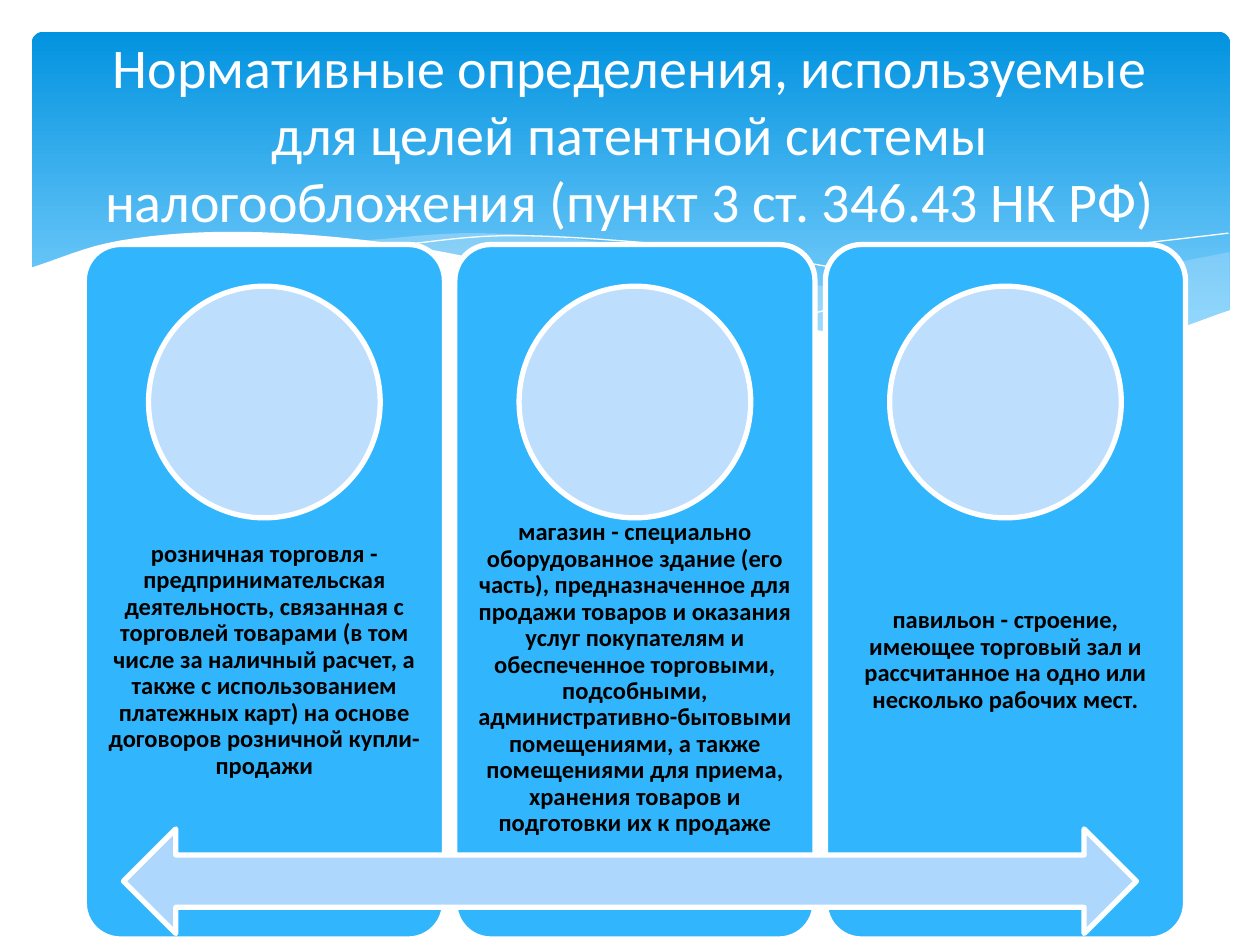
"""Build a slide with three definition cards under a wave-edged title band."""
from lxml import etree
from pptx import Presentation
from pptx import util as u
from pptx.dml.color import RGBColor
from pptx.enum import shapes, text
from pptx.oxml.ns import qn

THEME = {
    "font": "Calibri", "title_size": 32, "body_size": 14, "outline": 3,
    "white": "FFFFFF", "black": "000000", "band_top": "0293E0", "band_bottom": "83D3FE",
    "mist": "C6E7FC", "card": "31B6FD", "circle": "BEDEFE", "arrow": "AED7FE",
}

TITLE = ("Нормативные определения, используемые для целей патентной системы "
         "налогообложения (пункт 3 ст. 346.43 НК РФ)")

CARDS = [
    {"text": "розничная торговля - предпринимательская деятельность, связанная с торговлей "
             "товарами (в том числе за наличный расчет, а также с использованием платежных "
             "карт) на основе договоров розничной купли-продажи", "drop": 0},
    {"text": "магазин - специально оборудованное здание (его часть), предназначенное для "
             "продажи товаров и оказания услуг покупателям и обеспеченное торговыми, "
             "подсобными, административно-бытовыми помещениями, а также помещениями для "
             "приема, хранения товаров и подготовки их к продаже", "drop": 0.36},
    {"text": "павильон - строение, имеющее торговый зал и рассчитанное на одно или "
             "несколько рабочих мест.", "drop": 0},
]

CARD_LEFT, CARD_TOP, CARD_WIDTH, CARD_HEIGHT, CARD_PITCH = 1.7, 4.93, 7.26, 14.0, 7.47
CIRCLE_TOP, CIRCLE_SIZE = 5.77, 4.67
TEXT_TOP, TEXT_HEIGHT, TEXT_INSET = 10.52, 5.59, 0.28

UNIT = 2.54
CURVE_STEPS = 8
WAVES = [
    {"fill": "mist", "alpha": 29, "edges": [
        [(9.76, 2), (8.61, 2.23), (6.61, 2.65)],
        [(6.61, 2.65), (8.14, 2.78), (9.13, 2.67), (9.76, 2.47)]]},
    {"fill": "mist", "alpha": 40, "edges": [
        [(8.93, 2.73), (7.75, 2.54), (6.29, 2.22), (4.89, 1.94), (3.8, 1.85), (2.86, 1.91)],
        [(2.86, 1.91), (4.49, 2.22), (6.34, 2.61), (7.85, 2.78), (8.93, 2.73)]]},
    {"line": "white", "edges": [
        [(3.09, 1.95), (4.16, 1.87), (5.82, 2), (7.27, 2.26), (9.07, 2.72)]]},
    {"line": "white", "edges": [
        [(6.13, 2.57), (7.48, 2.23), (8.66, 1.99), (9.75, 1.85)]]},
    {"fill": "white", "edges": [
        [(9.77, 2.46), (9.1, 2.67), (8.09, 2.77), (6.48, 2.62), (4.47, 2.2),
         (3.16, 1.94), (1.93, 1.84), (0.95, 1.91), (0.23, 2.13)],
        [(0.23, 3.29), (9.77, 3.29)]]},
]


def color(name):
    return RGBColor.from_string(THEME[name])


def paint(shape, fill=None, line=None, width=0, alpha=None):
    shape.shadow.inherit = False
    if fill:
        shape.fill.solid()
        shape.fill.fore_color.rgb = color(fill)
    else:
        shape.fill.background()
    if alpha:
        tint = shape.fill._xPr.find(qn("a:solidFill"))[0]
        etree.SubElement(tint, qn("a:alpha"), val=str(alpha * 1000))
    if line:
        shape.line.color.rgb = color(line)
        shape.line.width = u.Pt(width)
    else:
        shape.line.fill.background()


def add_shape(slide, kind, left, top, width, height, fill, adjustment=None):
    shape = slide.shapes.add_shape(kind, *map(u.Cm, (left, top, width, height)))
    if adjustment is not None:
        shape.adjustments[0] = adjustment
    paint(shape, fill, "white", THEME["outline"])
    return shape


def write(shape, content, size, font_color, bold=False, spacing=1.0, inset=None):
    frame = shape.text_frame
    frame.word_wrap = True
    frame.auto_size = text.MSO_AUTO_SIZE.NONE
    frame.vertical_anchor = text.MSO_ANCHOR.MIDDLE
    if inset is not None:
        frame.margin_left = frame.margin_right = u.Cm(inset)
        frame.margin_top = frame.margin_bottom = u.Cm(inset)
    paragraph = frame.paragraphs[0]
    paragraph.alignment = text.PP_ALIGN.CENTER
    paragraph.line_spacing = spacing
    run = paragraph.add_run()
    run.text = content
    run.font.name = THEME["font"]
    run.font.size = u.Pt(THEME[size])
    run.font.bold = bold
    run.font.color.rgb = color(font_color)


def add_band(slide):
    band = add_shape(slide, shapes.MSO_SHAPE.ROUNDED_RECTANGLE,
                     0.64, 0.64, 24.16, 6.86, "band_top", 0.034)
    band.line.fill.background()
    band.fill.gradient()
    band.fill.gradient_angle = 270
    stops = zip(band.fill.gradient_stops, (0, 0.9), ("band_top", "band_bottom"))
    for stop, position, name in stops:
        stop.position = position
        stop.color.rgb = color(name)


def smooth_edge(anchors):
    def slope(index, axis):
        before, after = max(index - 1, 0), min(index + 1, len(anchors) - 1)
        return (anchors[after][axis] - anchors[before][axis]) / (after - before)

    def blend(index, axis, t):
        start, end = anchors[index][axis], anchors[index + 1][axis]
        ease = t * t * (3 - 2 * t)
        bend = t * (1 - t) * ((1 - t) * slope(index, axis) - t * slope(index + 1, axis))
        return start + (end - start) * ease + bend

    points = [tuple(blend(index, axis, step / CURVE_STEPS) for axis in (0, 1))
              for index in range(len(anchors) - 1) for step in range(CURVE_STEPS)]
    return points + [anchors[-1]]


def add_wave(slide, edges, **style):
    start, *rest = [(u.Cm(x * UNIT), u.Cm(y * UNIT))
                    for edge in edges for x, y in smooth_edge(edge)]
    builder = slide.shapes.build_freeform(*start)
    builder.add_line_segments(rest, close="fill" in style)
    paint(builder.convert_to_shape(), **style)


def add_card(slide, index, card):
    left = CARD_LEFT + index * CARD_PITCH
    add_shape(slide, shapes.MSO_SHAPE.ROUNDED_RECTANGLE,
              left, CARD_TOP, CARD_WIDTH, CARD_HEIGHT, "card", 0.1)
    box = slide.shapes.add_textbox(
        *map(u.Cm, (left, TEXT_TOP + card["drop"], CARD_WIDTH, TEXT_HEIGHT)))
    write(box, card["text"], "body_size", "black", bold=True, spacing=0.9, inset=TEXT_INSET)
    add_shape(slide, shapes.MSO_SHAPE.OVAL, left + (CARD_WIDTH - CIRCLE_SIZE) / 2,
              CIRCLE_TOP, CIRCLE_SIZE, CIRCLE_SIZE, "circle")


def add_title(slide):
    title = slide.shapes.title
    title.left, title.top, title.width, title.height = map(u.Cm, (1.27, 0.94, 22.86, 3.48))
    write(title, TITLE, "title_size", "white")
    slide.shapes._spTree.append(title._element)


def main():
    presentation = Presentation()
    presentation.slide_width, presentation.slide_height = u.Cm(25.4), u.Cm(19.05)
    slide = presentation.slides.add_slide(presentation.slide_layouts[5])
    add_band(slide)
    for wave in WAVES:
        add_wave(slide, **wave)
    for index, card in enumerate(CARDS):
        add_card(slide, index, card)
    add_shape(slide, shapes.MSO_SHAPE.LEFT_RIGHT_ARROW, 2.49, 16.71, 20.42, 2.11, "arrow")
    add_title(slide)
    presentation.save("out.pptx")


if __name__ == "__main__":
    main()
